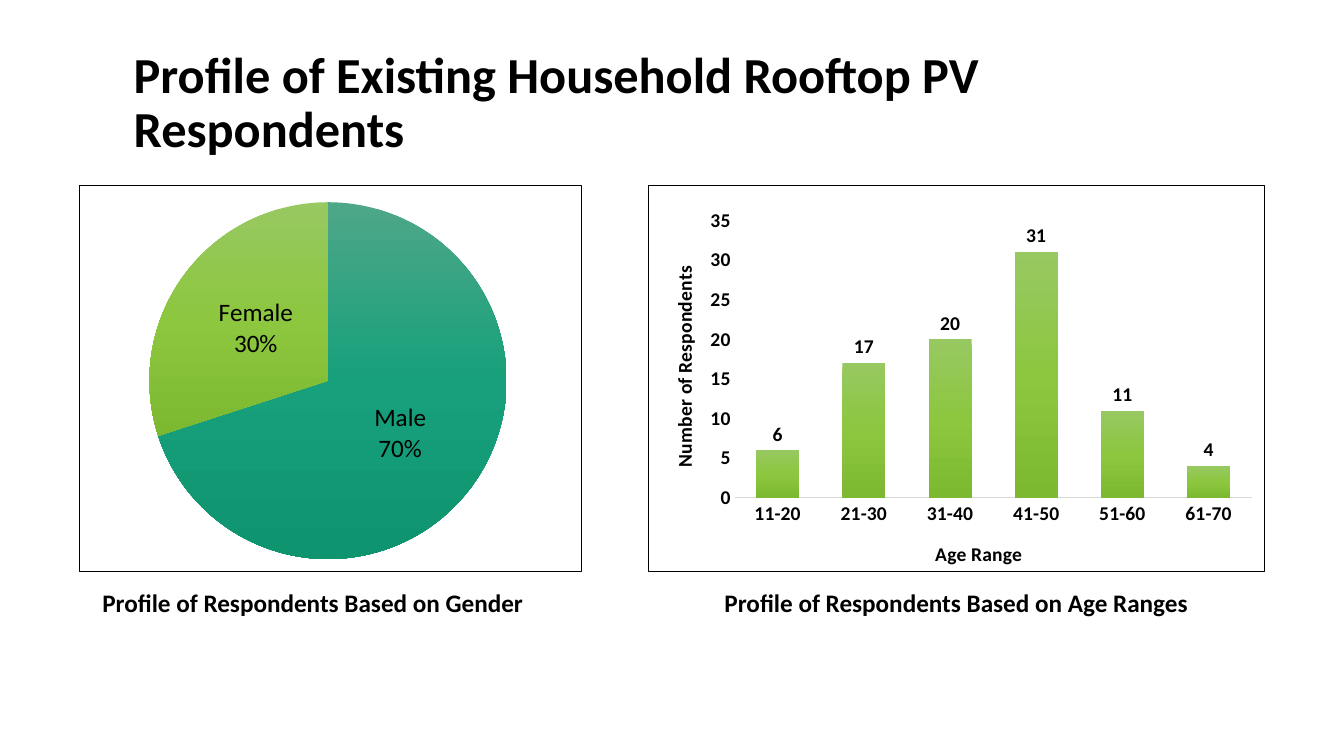
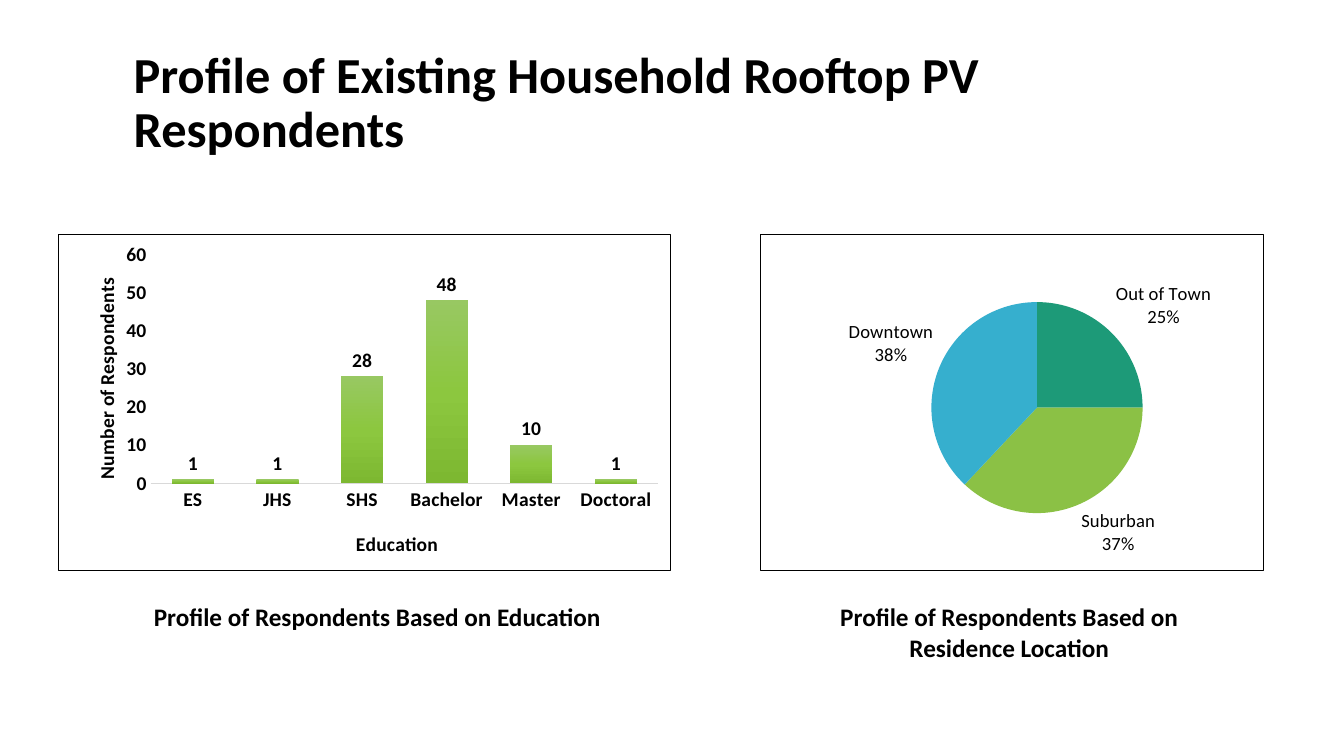
from copy import deepcopy

from lxml import etree
from pptx import Presentation
from pptx.chart.data import CategoryChartData
from pptx.dml.color import RGBColor
from pptx.enum import chart as charts, text
from pptx.oxml import parse_xml
from pptx.oxml.ns import nsdecls, qn
from pptx.util import Cm, Pt

TITLE = "Profile of Existing Household Rooftop PV Respondents"
TITLE_FRAME = (3.12, 1.4, 27.64, 2.46)
CAPTION_HEIGHT = 1.02
COUNT_TITLE = "Number of Respondents"

# Frames are left, width in cm; plot and title places are fractions of the chart.
SLIDES = [
    dict(top=4.67, height=9.75, caption_top=14.68, panels=[
        dict(kind="pie", frame=(1.98, 12.7), caption_frame=(1.98, 11.81),
             caption="Profile of Respondents Based on Gender",
             data={"Male": 70, "Female": 30}, fills=["teal_blend", "green_blend"],
             label_size="caption", label_place="CENTER",
             plot=(0.14, 0.04, 0.71, 0.93)),
        dict(kind="column", frame=(16.33, 15.54), caption_frame=(16.33, 15.54),
             caption="Profile of Respondents Based on Age Ranges",
             data={"11-20": 6, "21-30": 17, "31-40": 20,
                   "41-50": 31, "51-60": 11, "61-70": 4},
             axis_title="Age Range", scale=(35, 5), plot=(0.14, 0.09, 0.84, 0.72),
             title_places=[(0.46, 0.91), (0.03, 0.2)]),
    ]),
    dict(top=5.89, height=8.51, caption_top=15.04, panels=[
        dict(kind="column", frame=(1.47, 15.44), caption_frame=(1.47, 16.08),
             caption="Profile of Respondents Based on Education",
             data={"ES": 1, "JHS": 1, "SHS": 28,
                   "Bachelor": 48, "Master": 10, "Doctoral": 1},
             axis_title="Education", scale=(60, 10), plot=(0.15, 0.06, 0.83, 0.68),
             title_places=[(0.48, 0.87), (0.05, 0.12)]),
        dict(kind="pie", frame=(19.15, 12.7), caption_frame=(19.53, 11.81),
             caption="Profile of Respondents Based on Residence Location",
             data={"Out of Town": 25, "Suburban": 37, "Downtown": 38},
             fills=["teal", "green", "blue"],
             label_size="small", label_place="OUTSIDE_END",
             plot=(0.34, 0.2, 0.42, 0.63)),
    ]),
]

THEME = dict(
    font="Calibri",
    ink="000000",
    axis_line="D9D9D9",
    sizes=dict(title=36, caption=18, axis=14, small=13.3),
    fills=dict(
        teal=["1D9A78"], green=["8BC145"], blue=["36AFCE"],
        teal_blend=["4EA788", "17A07B", "0F9470"],
        green_blend=["98C862", "8CC73F", "7DB831"],
    ),
)


def apply(target, **values):
    for name, value in values.items():
        setattr(target, name, value)


def style_font(font, size, bold=True):
    apply(font, name=THEME["font"], size=Pt(THEME["sizes"][size]), bold=bold)
    font.color.rgb = RGBColor.from_string(THEME["ink"])


def add_text(page, words, frame, size, align, **format_values):
    box = page.shapes.add_textbox(*map(Cm, frame))
    apply(box.text_frame, word_wrap=True, **format_values)
    para = box.text_frame.paragraphs[0]
    para.alignment = align
    span = para.add_run()
    span.text = words
    style_font(span.font, size)
    return para


def paint(fill, name):
    """Fill with one colour, or with a top-to-bottom blend of three."""
    colours = [RGBColor.from_string(code) for code in THEME["fills"][name]]
    if len(colours) == 1:
        fill.solid()
        fill.fore_color.rgb = colours[0]
        return
    fill.gradient()
    fill.gradient_angle = 270
    first = fill.gradient_stops[0].element
    first.addnext(deepcopy(first))
    for stop, colour, position in zip(fill.gradient_stops, colours, (0, 0.5, 1)):
        stop.position = position
        stop.color.rgb = colour


def place(element, fractions, inner=False):
    """Give a plot area or an axis title a fixed place in its chart."""
    layout = element.find(qn("c:layout"))
    if layout is None:
        layout = etree.Element(qn("c:layout"))
        element.insert(0, layout)
    for child in list(layout):
        layout.remove(child)
    manual = etree.SubElement(layout, qn("c:manualLayout"))
    settings = [("layoutTarget", "inner")] if inner else []
    settings += [("xMode", "edge"), ("yMode", "edge")]
    settings += zip("xywh", fractions)
    for tag, value in settings:
        etree.SubElement(manual, qn("c:" + tag)).set("val", str(value))


def add_border(chart):
    border = parse_xml(
        f'<c:spPr {nsdecls("c", "a")}><a:noFill/><a:ln w="{Pt(0.75)}"><a:solidFill>'
        f'<a:srgbClr val="{THEME["ink"]}"/></a:solidFill></a:ln></c:spPr>')
    chart.element.find(qn("c:txPr")).addprevious(border)


def style_pie(chart, panel):
    plot = chart.plots[0]
    for index, name in enumerate(panel["fills"]):
        paint(plot.series[0].points[index].format.fill, name)
    labels = plot.data_labels
    apply(labels, show_value=False, show_category_name=True, show_percentage=True,
          number_format="0%", number_format_is_linked=False)
    style_font(labels.font, panel["label_size"], bold=False)
    separator = etree.Element(qn("c:separator"))
    separator.text = "\n"
    next(chart.element.iter(qn("c:showBubbleSize"))).addnext(separator)


def style_columns(chart, panel):
    plot = chart.plots[0]
    apply(plot, gap_width=100, overlap=-24)
    paint(plot.series[0].format.fill, "green_blend")
    plot.data_labels.show_value = True
    style_font(plot.data_labels.font, "axis")
    axes = (chart.category_axis, chart.value_axis)
    titles = (panel["axis_title"], COUNT_TITLE)
    for axis, words, spot in zip(axes, titles, panel["title_places"]):
        apply(axis, has_major_gridlines=False,
              major_tick_mark=charts.XL_TICK_MARK.NONE,
              minor_tick_mark=charts.XL_TICK_MARK.NONE)
        style_font(axis.tick_labels.font, "axis")
        frame = axis.axis_title.text_frame
        frame.text = words
        style_font(frame.paragraphs[0].runs[0].font, "axis")
        place(axis.axis_title.element, spot)
    line = chart.category_axis.format.line
    line.width = Pt(1)
    line.color.rgb = RGBColor.from_string(THEME["axis_line"])
    chart.value_axis.format.line.fill.background()
    top, step = panel["scale"]
    apply(chart.value_axis, minimum_scale=0, maximum_scale=top, major_unit=step)


KINDS = {
    "pie": (charts.XL_CHART_TYPE.PIE, style_pie),
    "column": (charts.XL_CHART_TYPE.COLUMN_CLUSTERED, style_columns),
}


def add_panel(page, panel, top, height):
    chart_type, style = KINDS[panel["kind"]]
    data = CategoryChartData()
    data.categories = list(panel["data"])
    data.add_series("Respondents", list(panel["data"].values()))
    left, width = panel["frame"]
    frame = map(Cm, (left, top, width, height))
    chart = page.shapes.add_chart(chart_type, *frame, data).chart
    apply(chart, has_title=False, has_legend=False)
    style_font(chart.font, "axis")
    add_border(chart)
    plot = chart.plots[0]
    apply(plot, vary_by_categories=panel["kind"] == "pie", has_data_labels=True)
    style(chart, panel)
    plot.data_labels.position = charts.XL_LABEL_POSITION[
        panel.get("label_place", "OUTSIDE_END")]
    place(next(chart.element.iter(qn("c:plotArea"))), panel["plot"], inner=True)


def main():
    deck = Presentation()
    apply(deck, slide_width=Cm(33.87), slide_height=Cm(19.05))
    for content in SLIDES:
        page = deck.slides.add_slide(deck.slide_layouts[6])
        title = add_text(page, TITLE, TITLE_FRAME, "title", text.PP_ALIGN.LEFT,
                         vertical_anchor=text.MSO_ANCHOR.MIDDLE)
        title.line_spacing = 0.9
        for panel in content["panels"]:
            add_panel(page, panel, content["top"], content["height"])
            left, width = panel["caption_frame"]
            add_text(page, panel["caption"],
                     (left, content["caption_top"], width, CAPTION_HEIGHT),
                     "caption", text.PP_ALIGN.CENTER)
    deck.save("out.pptx")


if __name__ == "__main__":
    main()
